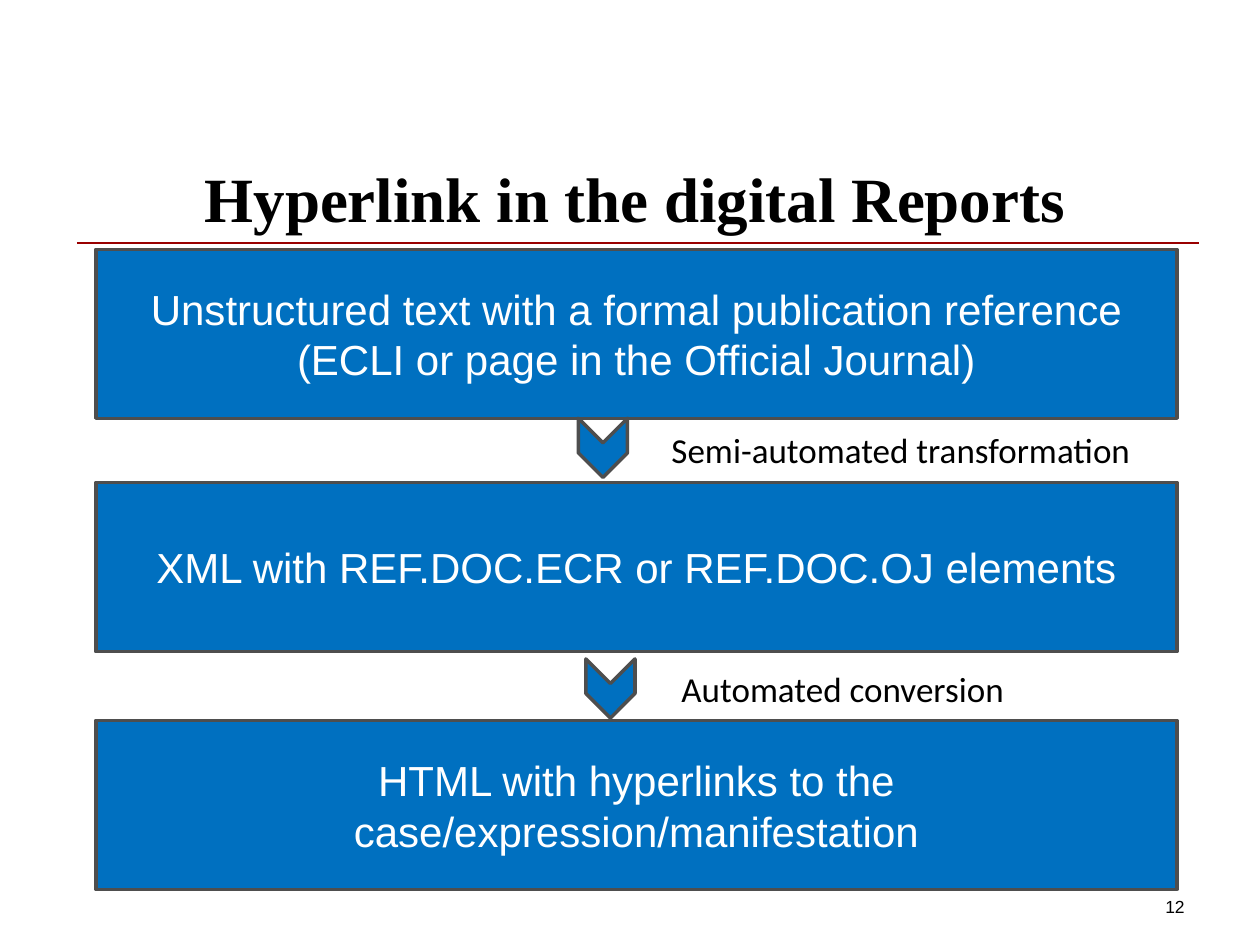
from lxml.etree import SubElement
from pptx import Presentation
from pptx.dml.color import RGBColor
from pptx.enum.shapes import MSO_CONNECTOR, MSO_SHAPE
from pptx.enum.text import MSO_ANCHOR, PP_ALIGN
from pptx.oxml.ns import qn
from pptx.util import Pt

TITLE = "Hyperlink in the digital Reports"
PAGE_NUMBER = "12"
# Top of each stage box, and its text
STAGES = [
    (142.6, "Unstructured text with a formal publication reference "
            "(ECLI or page in the Official Journal)"),
    (275.8, "XML with REF.DOC.ECR or REF.DOC.OJ elements"),
    (411.8, "HTML with hyperlinks to the case/expression/manifestation"),
]
# Chevron left and top, then label left, top and width, and its text
STEPS = [
    (327.6, 241.9, 376.6, 241.2, 279.4, "Semi-automated transformation"),
    (331.9, 379.4, 382.3, 378, 200.2, "Automated conversion"),
]
STAGE_LEFT, STAGE_WIDTH, STAGE_HEIGHT = 54.7, 617.8, 96.5
CHEVRON_WIDTH, CHEVRON_HEIGHT = 33.8, 28.1
LABEL_HEIGHT = 31.7

BLACK, WHITE, BLUE, GREY, RED = "000000", "FFFFFF", "0070C0", "4E4E4E", "990000"
TITLE_FONT = {"name": "Times New Roman", "size": Pt(36), "bold": True}
STAGE_FONT = {"name": "Arial", "size": Pt(24)}
LABEL_FONT = {"name": "Calibri", "size": Pt(20)}
NUMBER_FONT = {"name": "Arial", "size": Pt(10)}


def color(hex_value):
    return RGBColor.from_string(hex_value)


def write(shape, text, font, ink=BLACK, align=PP_ALIGN.LEFT,
          anchor=MSO_ANCHOR.TOP, wrap=True):
    frame = shape.text_frame
    frame.word_wrap = wrap
    frame.vertical_anchor = anchor
    para = frame.paragraphs[0]
    para.alignment = align
    span = para.add_run()
    span.text = text
    for name, value in font.items():
        setattr(span.font, name, value)
    span.font.color.rgb = color(ink)
    return frame


def add_text(page, area, *args, **kwargs):
    box = page.shapes.add_textbox(*map(Pt, area))
    return write(box, *args, **kwargs)


def add_block(page, preset, area):
    """Add a blue shape with a grey outline."""
    block = page.shapes.add_shape(preset, *map(Pt, area))
    block.shadow.inherit = False
    block.fill.solid()
    block.fill.fore_color.rgb = color(BLUE)
    block.line.color.rgb = color(GREY)
    block.line.width = Pt(2)
    return block


def add_rule(page, left, right, top):
    rule = page.shapes.add_connector(
        MSO_CONNECTOR.STRAIGHT, Pt(left), Pt(top), Pt(right), Pt(top))
    rule.line.color.rgb = color(RED)
    rule.line.width = Pt(1)
    SubElement(rule._element.spPr, qn("a:effectLst"))


def main():
    deck = Presentation()
    deck.slide_width, deck.slide_height = Pt(720), Pt(540)
    page = deck.slides.add_slide(deck.slide_layouts[6])

    add_rule(page, 43.9, 685.4, 139)
    title = add_text(page, (41.8, 82.8, 642.2, 96.5), TITLE, TITLE_FONT,
                     align=PP_ALIGN.CENTER, anchor=MSO_ANCHOR.BOTTOM)
    title.margin_bottom = Pt(45)
    title.paragraphs[0].line_spacing = 0.8
    add_text(page, (534.2, 491.8, 149.8, 36), PAGE_NUMBER, NUMBER_FONT,
             align=PP_ALIGN.RIGHT, anchor=MSO_ANCHOR.BOTTOM)

    for top, text in STAGES:
        stage = add_block(page, MSO_SHAPE.RECTANGLE,
                          (STAGE_LEFT, top, STAGE_WIDTH, STAGE_HEIGHT))
        write(stage, text, STAGE_FONT, WHITE, PP_ALIGN.CENTER, MSO_ANCHOR.MIDDLE)

    for left, top, label_left, label_top, label_width, text in STEPS:
        chevron = add_block(page, MSO_SHAPE.CHEVRON,
                            (left, top, CHEVRON_WIDTH, CHEVRON_HEIGHT))
        chevron.rotation = 90
        add_text(page, (label_left, label_top, label_width, LABEL_HEIGHT),
                 text, LABEL_FONT, wrap=False)

    deck.save("out.pptx")


if __name__ == "__main__":
    main()
